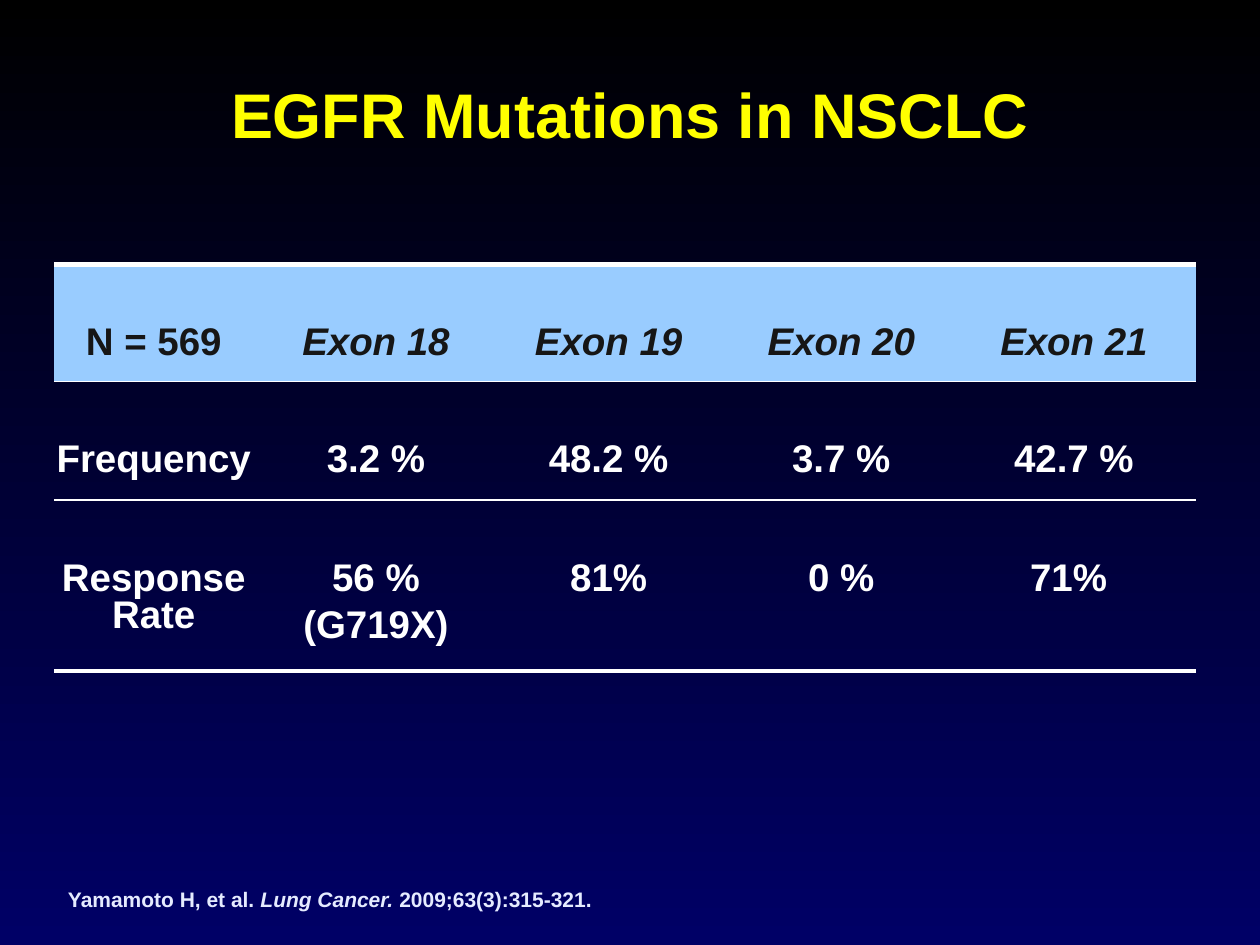
from dataclasses import dataclass

from lxml.etree import SubElement
from pptx import Presentation
from pptx.dml.color import RGBColor
from pptx.enum.text import MSO_ANCHOR, PP_ALIGN
from pptx.oxml.ns import qn
from pptx.util import Cm, Pt

BLACK = RGBColor(0x00, 0x00, 0x00)
NAVY = RGBColor(0x00, 0x00, 0x66)
YELLOW = RGBColor(0xFF, 0xFF, 0x00)
WHITE = RGBColor(0xFF, 0xFF, 0xFF)
SKY = RGBColor(0x99, 0xCC, 0xFF)
INK = RGBColor(0x16, 0x16, 0x16)
PALE = RGBColor(0xE5, 0xEB, 0xFF)

FONT = "Arial"
NO_GRID_STYLE = "{2D5ABB26-0587-4C30-8999-92F81FD0307C}"
LABEL_WIDTH = Cm(4.27)
VALUE_WIDTH = Cm(4.69)


@dataclass(frozen=True)
class TableRow:
    label: str
    values: tuple[str, ...]
    height: Cm
    color: RGBColor = WHITE
    italic_values: bool = False
    fill: RGBColor | None = None
    top_line: float = 0
    bottom_line: float = 0


ROWS = (
    TableRow("N = 569", ("Exon 18", "Exon 19", "Exon 20", "Exon 21"), Cm(2.36),
             color=INK, italic_values=True, fill=SKY, top_line=3, bottom_line=1),
    TableRow("Frequency", ("3.2 %", "48.2 %", "3.7 %", "42.7 %"), Cm(2.39), top_line=1),
    TableRow("Response Rate", ("56 %\n(G719X)", "81%", "0 %", "71% "), Cm(3.45), bottom_line=3),
)


def add_text(para, text: str, *, size: float, color: RGBColor, italic: bool = False) -> None:
    span = para.add_run()
    span.text = text
    span.font.name = FONT
    span.font.size = Pt(size)
    span.font.bold = True
    span.font.italic = italic
    span.font.color.rgb = color


def add_border(cell, tag: str, width: float, position: int) -> None:
    properties = cell._tc.get_or_add_tcPr()
    line = SubElement(properties, qn(tag), w=str(Pt(width)))
    color = SubElement(SubElement(line, qn("a:solidFill")), qn("a:srgbClr"))
    color.set("val", str(WHITE))
    properties.insert(position, line)


def format_cell(cell, text: str, row: TableRow, italic: bool) -> None:
    cell.margin_left, cell.margin_right = Cm(0), Cm(0.25)
    cell.margin_top, cell.margin_bottom = Cm(1.24), Cm(0.13)
    if row.fill is None:
        cell.fill.background()
    else:
        cell.fill.solid()
        cell.fill.fore_color.rgb = row.fill
    borders = (("a:lnT", row.top_line), ("a:lnB", row.bottom_line))
    visible = [border for border in borders if border[1]]
    for position, (tag, width) in enumerate(visible):
        add_border(cell, tag, width, position)
    frame = cell.text_frame
    for index, line in enumerate(text.split("\n")):
        para = frame.add_paragraph() if index else frame.paragraphs[0]
        para.alignment = PP_ALIGN.CENTER
        para.line_spacing = 0.87
        para.space_before = Pt(5.5)
        add_text(para, line, size=22, color=row.color, italic=italic)


def add_title(page) -> None:
    title = page.shapes.title
    title.left, title.top = Cm(1.27), Cm(1.22)
    title.width, title.height = Cm(22.86), Cm(2.11)
    title.text_frame.vertical_anchor = MSO_ANCHOR.MIDDLE
    para = title.text_frame.paragraphs[0]
    para.alignment = PP_ALIGN.CENTER
    add_text(para, "EGFR Mutations in NSCLC", size=36, color=YELLOW)


def add_mutation_table(page) -> None:
    value_count = len(ROWS[0].values)
    frame = page.shapes.add_table(
        len(ROWS), value_count + 1, Cm(1.09), Cm(5.33),
        LABEL_WIDTH + value_count * VALUE_WIDTH, sum(row.height for row in ROWS))
    table = frame.table
    table.horz_banding = False
    table._tbl.tblPr.find(qn("a:tableStyleId")).text = NO_GRID_STYLE
    for index, column in enumerate(table.columns):
        column.width = VALUE_WIDTH if index else LABEL_WIDTH
    for row_index, row in enumerate(ROWS):
        table.rows[row_index].height = row.height
        for column_index, text in enumerate((row.label, *row.values)):
            italic = row.italic_values and column_index > 0
            format_cell(table.cell(row_index, column_index), text, row, italic)


def add_citation(page) -> None:
    box = page.shapes.add_textbox(Cm(1.12), Cm(17.25), Cm(11.38), Cm(1.8))
    box.text_frame.word_wrap = True
    box.text_frame.margin_top = Cm(0.62)
    para = box.text_frame.paragraphs[0]
    for text, italic in (("Yamamoto H, et al. ", False),
                         ("Lung Cancer. ", True),
                         ("2009;63(3):315-321.", False)):
        add_text(para, text, size=12, color=PALE, italic=italic)


def main() -> None:
    deck = Presentation()
    deck.slide_width, deck.slide_height = Cm(25.4), Cm(19.05)
    page = deck.slides.add_slide(deck.slide_layouts[5])
    background = page.background.fill
    background.gradient()
    background.gradient_angle = 270
    for stop, color in zip(background.gradient_stops, (BLACK, NAVY)):
        stop.color.rgb = color
    add_title(page)
    add_mutation_table(page)
    add_citation(page)
    deck.save("out.pptx")


if __name__ == "__main__":
    main()
